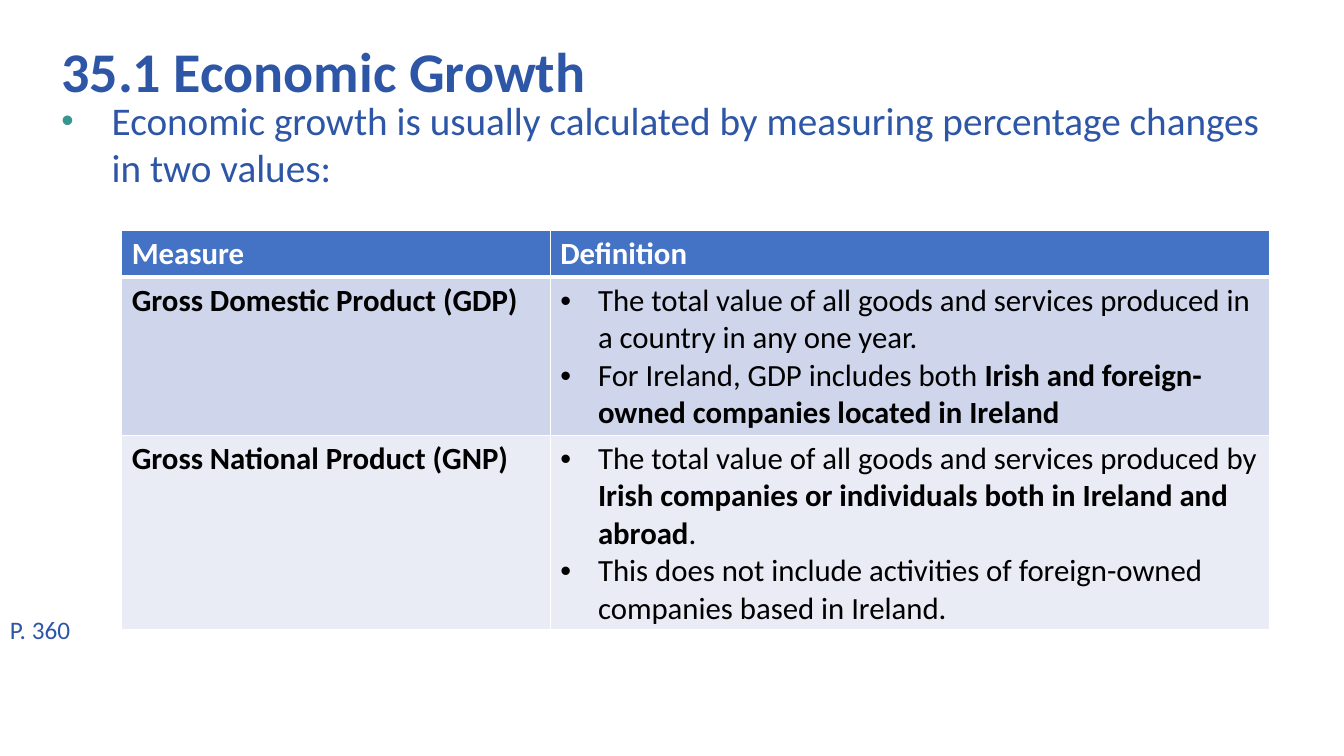
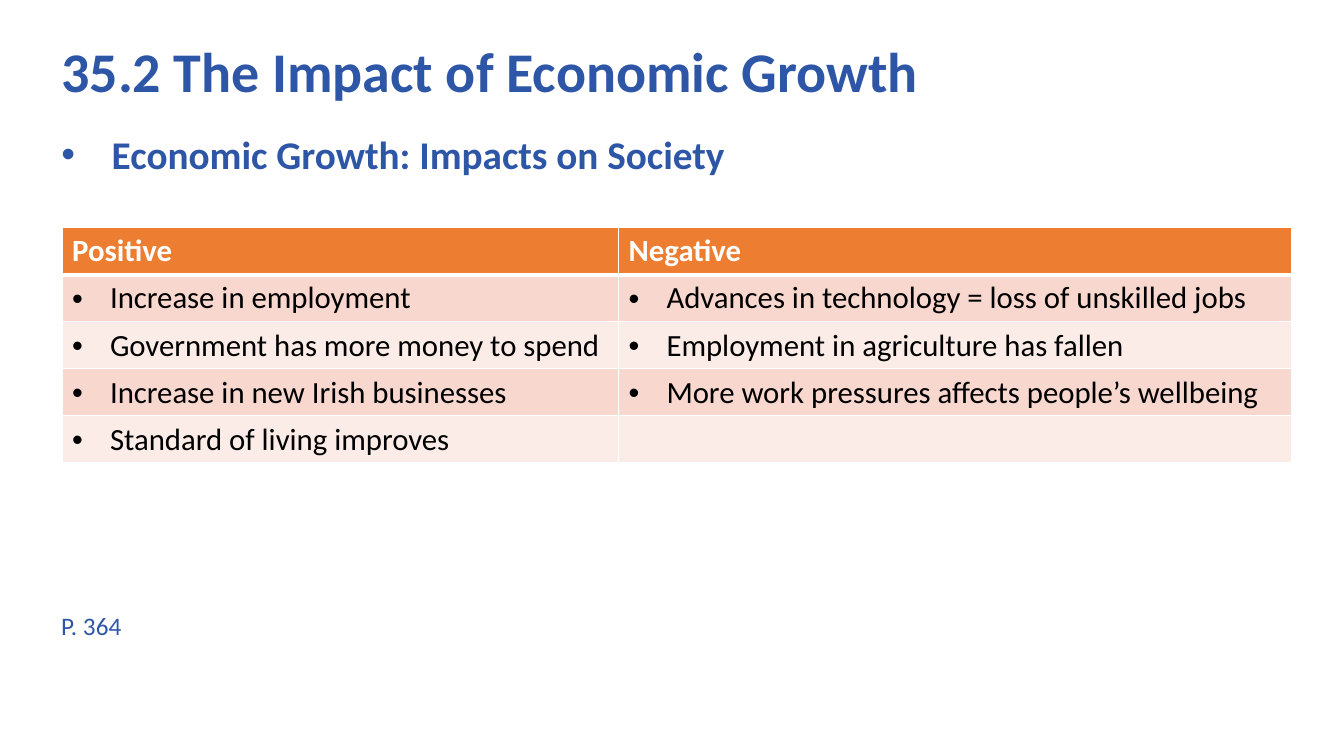
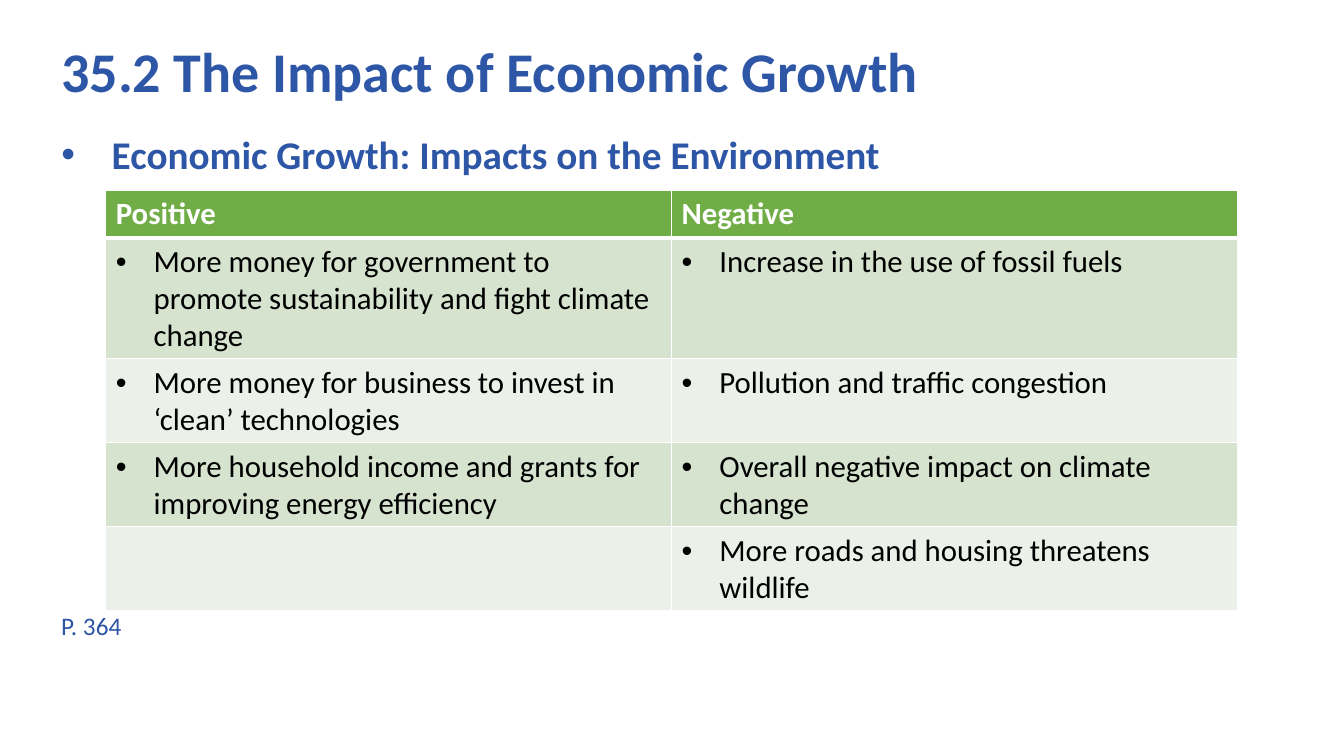
from lxml.etree import SubElement
from pptx import Presentation
from pptx.dml.color import RGBColor
from pptx.enum.text import MSO_ANCHOR as Anchor, MSO_AUTO_SIZE as AutoSize, PP_ALIGN as Align
from pptx.oxml.ns import qn
from pptx.util import Inches, Pt

COLORS = {
    "blue": "2E56A6", "teal": "369791", "white": "FFFFFF", "black": "000000",
    "blue_head": "4472C4", "blue_dark": "CFD5EA", "blue_light": "E9EBF5",
    "orange_head": "ED7D31", "orange_dark": "F8D7CE", "orange_light": "FCECE8",
    "green_head": "70AD47", "green_dark": "D5E3CF", "green_light": "EBF1E9",
}
FONT = "Calibri"
COLUMNS, ROWS = 160, 90
WIDTH, HEIGHT = Inches(13.33), Inches(7.5)
MARGIN = 6.1
TITLE_BOX = (MARGIN, 4.8, 138, 8.2)
IMPACT_BOX = (MARGIN, 14.9, 132.4, 55.7)
IMPACT_LABEL = (MARGIN, 72.1, 80, 4.8)
ROW_HEIGHT = 5

SLIDES = [
    {
        "title": "35.1 Economic Growth",
        "lead": "Economic growth is usually calculated by measuring percentage changes in two values:",
        "lead_box": (MARGIN, 10.9, 145.1, 55.7),
        "lead_style": {"bold": False, "bullet_color": "teal", "bullet_size": 90},
        "label": "P. 360",
        "label_box": (0, 72.5, 80, 4.8),
        "corner": (14.5, 27.4),
        "widths": (51, 85.6),
        "theme": "blue",
        "rows": [
            ("Measure", "Definition"),
            ("Gross Domestic Product (GDP)", [
                "The total value of all goods and services produced in a country in any one year.",
                "For Ireland, GDP includes both **Irish and foreign-owned companies located in Ireland**",
            ]),
            ("Gross National Product (GNP)", [
                "The total value of all goods and services produced by "
                "**Irish companies or individuals both in Ireland and abroad**.",
                "This does not include activities of foreign-owned companies based in Ireland.",
            ]),
        ],
    },
    {
        "title": "35.2 The Impact of Economic Growth",
        "lead": "Economic Growth: Impacts on Society",
        "lead_box": IMPACT_BOX,
        "lead_style": {"bold": True},
        "label": "P. 364",
        "label_box": IMPACT_LABEL,
        "corner": (7.4, 27.1),
        "widths": (66.25, 80.15),
        "theme": "orange",
        "rows": [
            ("Positive", "Negative"),
            (["Increase in employment"], ["Advances in technology = loss of unskilled jobs"]),
            (["Government has more money to spend"], ["Employment in agriculture has fallen"]),
            (["Increase in new Irish businesses"], ["More work pressures affects people’s wellbeing"]),
            (["Standard of living improves"], []),
        ],
    },
    {
        "title": "35.2 The Impact of Economic Growth",
        "lead": "Economic Growth: Impacts on the Environment",
        "lead_box": IMPACT_BOX,
        "lead_style": {"bold": True},
        "label": "P. 364",
        "label_box": IMPACT_LABEL,
        "corner": (12.6, 22.7),
        "widths": (67.35, 67.35),
        "theme": "green",
        "rows": [
            ("Positive", "Negative"),
            (["More money for government to promote sustainability and fight climate change"],
             ["Increase in the use of fossil fuels"]),
            (["More money for business to invest in ‘clean’ technologies"],
             ["Pollution and traffic congestion"]),
            (["More household income and grants for improving energy efficiency"],
             ["Overall negative impact on climate change"]),
            ([], ["More roads and housing threatens wildlife"]),
        ],
    },
]


def across(columns):
    """Return the length of a number of grid columns."""
    return int(WIDTH * columns / COLUMNS)


def down(rows):
    """Return the length of a number of grid rows."""
    return int(HEIGHT * rows / ROWS)


def place(shape, box):
    """Move a shape to a box given in grid units."""
    left, top, width, height = box
    shape.left, shape.top = across(left), down(top)
    shape.width, shape.height = across(width), down(height)


def color(name):
    """Return the named colour."""
    return RGBColor.from_string(COLORS[name])


def style(para, size, ink, bold=False):
    """Set the font of a whole paragraph."""
    font = para.font
    font.name, font.size, font.bold = FONT, Pt(size), bold
    font.color.rgb = color(ink)


def add_bullet(para, indent, bullet_color=None, bullet_size=None):
    """Give a paragraph a round bullet with a hanging indent."""
    props = para._p.get_or_add_pPr()
    props.set("marL", str(across(indent)))
    props.set("indent", str(-across(indent)))
    if bullet_color:
        SubElement(SubElement(props, qn("a:buClr")), qn("a:srgbClr"), val=COLORS[bullet_color])
    if bullet_size:
        SubElement(props, qn("a:buSzPct"), val=str(bullet_size * 1000))
    SubElement(props, qn("a:buFont"), typeface="Arial")
    SubElement(props, qn("a:buChar"), char="•")


def fill_title(page, text):
    """Place and format the slide title."""
    title = page.shapes.title
    place(title, TITLE_BOX)
    frame = title.text_frame
    frame.text, frame.auto_size, frame.vertical_anchor = text, AutoSize.NONE, Anchor.MIDDLE
    para = frame.paragraphs[0]
    para.alignment, para.line_spacing = Align.LEFT, 0.9
    style(para, 40, "blue", True)


def fill_lead(page, text, box, bold, **bullet):
    """Place the bulleted sentence that leads into the table."""
    body = page.placeholders[1]
    place(body, box)
    frame = body.text_frame
    frame.text, frame.auto_size = text, AutoSize.NONE
    para = frame.paragraphs[0]
    para.space_before = Pt(0)
    add_bullet(para, 6, **bullet)
    style(para, 28, "blue", bold)


def add_label(page, text, box):
    """Add the textbook page number."""
    label = page.shapes.add_textbox(0, 0, 0, 0)
    place(label, box)
    frame = label.text_frame
    frame.word_wrap, frame.text = True, text
    frame.auto_size = AutoSize.SHAPE_TO_FIT_TEXT
    style(frame.paragraphs[0], 18, "blue")


def add_borders(cell, bottom):
    """Draw white lines around a cell."""
    props = cell._tc.get_or_add_tcPr()
    for side, points in (("L", 1), ("R", 1), ("T", 1), ("B", bottom)):
        line = SubElement(props, qn(f"a:ln{side}"), w=str(Pt(points)))
        SubElement(SubElement(line, qn("a:solidFill")), qn("a:srgbClr"), val=COLORS["white"])


def fill_cell(cell, content, ink):
    """Write a bold heading or a bulleted list into a cell."""
    frame = cell.text_frame
    bulleted = isinstance(content, list)
    for index, text in enumerate(content if bulleted else [content]):
        para = frame.add_paragraph() if index else frame.paragraphs[0]
        if bulleted:
            add_bullet(para, 4.5)
        style(para, 22, ink, not bulleted)
        for part, words in enumerate(text.split("**")):
            span = para.add_run()
            span.text = words
            if part % 2:
                span.font.bold = True


def add_grid(page, corner, widths, rows, theme):
    """Add a banded table with a coloured heading row."""
    left, top = corner
    table = page.shapes.add_table(
        len(rows), len(widths), across(left), down(top),
        across(sum(widths)), down(ROW_HEIGHT * len(rows))).table
    for column, width in zip(table.columns, widths):
        column.width = across(width)
    for number, row in enumerate(rows):
        shade = "head" if number == 0 else ("light", "dark")[number % 2]
        for position, content in enumerate(row):
            cell = table.cell(number, position)
            add_borders(cell, 1 if number else 3)
            cell.fill.solid()
            cell.fill.fore_color.rgb = color(f"{theme}_{shade}")
            fill_cell(cell, content, "black" if number else "white")


def add_page(deck, data):
    """Add a slide with a title, a lead sentence, a table and a page label."""
    page = deck.slides.add_slide(deck.slide_layouts[1])
    fill_title(page, data["title"])
    fill_lead(page, data["lead"], data["lead_box"], **data["lead_style"])
    add_label(page, data["label"], data["label_box"])
    add_grid(page, data["corner"], data["widths"], data["rows"], data["theme"])


def main():
    """Build and save the deck."""
    deck = Presentation()
    deck.slide_width, deck.slide_height = WIDTH, HEIGHT
    for data in SLIDES:
        add_page(deck, data)
    deck.save("out.pptx")


if __name__ == "__main__":
    main()
